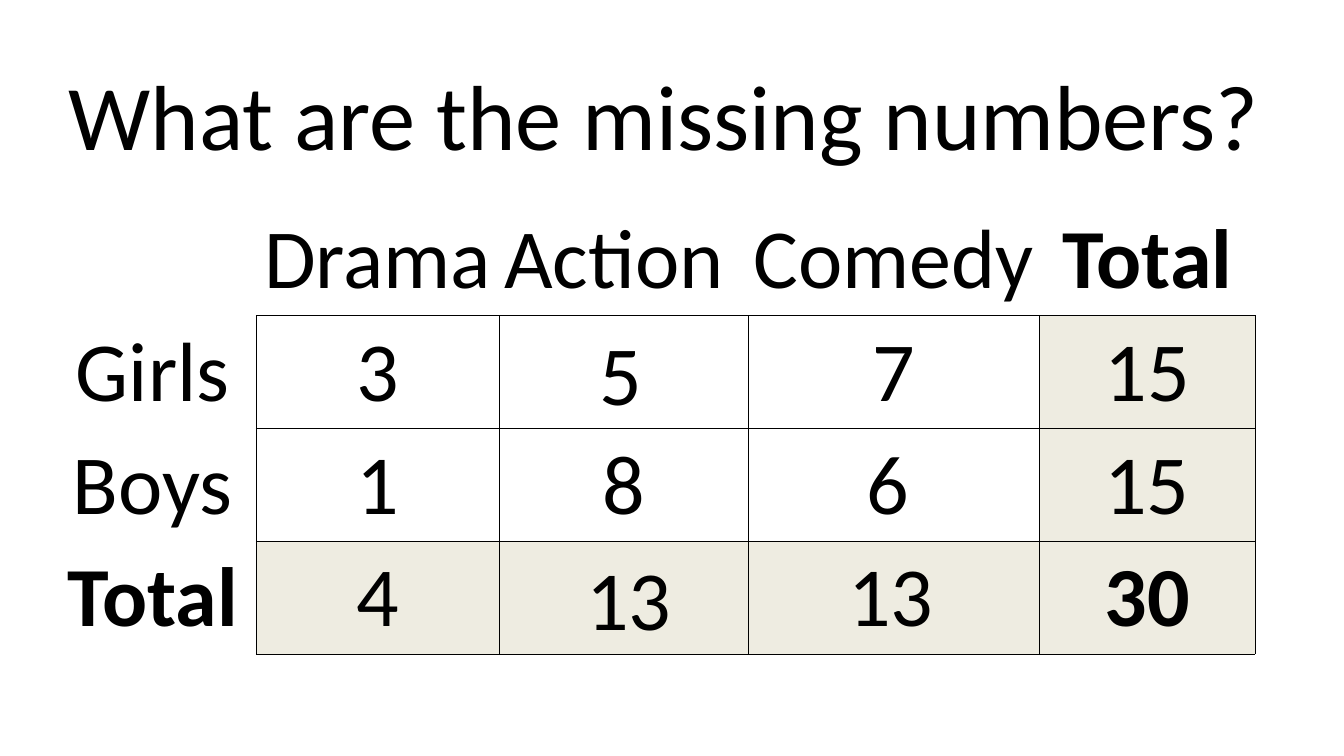
from lxml import etree
from pptx import Presentation
from pptx.dml.color import RGBColor
from pptx.enum.text import MSO_ANCHOR, MSO_AUTO_SIZE, PP_ALIGN
from pptx.oxml.ns import qn
from pptx.util import Inches, Pt

CENTER = PP_ALIGN.CENTER
MIDDLE = MSO_ANCHOR.MIDDLE
GROW = MSO_AUTO_SIZE.SHAPE_TO_FIT_TEXT

COLUMN_WIDTHS = [2.05, 2.41, 2.47, 2.89, 2.14]
ROW_HEIGHT = 1.12
SURVEY = [
    ["", "Drama", "Action ", "Comedy", "Total"],
    ["Girls", "3", "", "7", "15"],
    ["Boys", "1", "8", "", ""],
    ["Total", "", "", "", "30"],
]
BOLD_WORDS = {"Total", "30"}
ANSWERS = [
    ("5", 5.84, 3.14),
    ("4", 3.43, 5.33),
    ("13", 5.71, 5.37),
    ("13", 8.31, 5.33),
    ("6", 8.49, 4.22),
    ("15", 10.85, 4.22),
]


def color(value):
    return RGBColor.from_string(value)


class SlideBuilder:
    font = "Calibri"
    ink = "000000"
    paper = "FFFFFF"
    total_fill = "EEECE1"
    title_size = 66
    number_size = 60
    border_width = 0.5

    def __init__(self, slide):
        self.slide = slide

    def add_words(self, frame, words, size, bold=False):
        paragraph = frame.paragraphs[0]
        paragraph.alignment = CENTER
        run = paragraph.add_run()
        run.text = words
        run.font.name = self.font
        run.font.size = Pt(size)
        run.font.bold = bold
        run.font.color.rgb = color(self.ink)

    def text(self, words, left, top, width, height, size, wrap):
        box = self.slide.shapes.add_textbox(
            Inches(left), Inches(top), Inches(width), Inches(height))
        frame = box.text_frame
        frame.word_wrap = wrap
        frame.auto_size = GROW
        self.add_words(frame, words, size)

    def borders(self, cell, drawn):
        properties = cell._tc.get_or_add_tcPr()
        for side in "LRTB":
            line = etree.SubElement(properties, qn(f"a:ln{side}"))
            if side in drawn:
                line.set("w", str(Pt(self.border_width)))
                fill = etree.SubElement(line, qn("a:solidFill"))
                etree.SubElement(fill, qn("a:srgbClr")).set("val", self.ink)
            else:
                etree.SubElement(line, qn("a:noFill"))

    def cell(self, cell, words, row, column, last_row, last_column):
        inside = row > 0 and column > 0
        if inside:
            drawn = "LRTB"
        elif column > 0:
            drawn = "B"
        else:
            drawn = "R" if row > 0 else ""
        self.borders(cell, drawn)
        is_total = inside and (row == last_row or column == last_column)
        cell.fill.solid()
        cell.fill.fore_color.rgb = color(self.total_fill if is_total else self.paper)
        cell.vertical_anchor = MIDDLE
        cell.margin_left = cell.margin_right = cell.margin_top = Inches(0.01)
        cell.margin_bottom = 0
        if words:
            self.add_words(cell.text_frame, words, self.number_size, words in BOLD_WORDS)

    def table(self, rows, left, top, widths, row_height):
        table = self.slide.shapes.add_table(
            len(rows), len(widths), Inches(left), Inches(top),
            Inches(sum(widths)), Inches(row_height * len(rows))).table
        table.first_row = False
        table.horz_banding = False
        for column, width in zip(table.columns, widths):
            column.width = Inches(width)
        for r, row in enumerate(rows):
            table.rows[r].height = Inches(row_height)
            for c, words in enumerate(row):
                self.cell(table.cell(r, c), words, r, c, len(rows) - 1, len(widths) - 1)


def main():
    deck = Presentation()
    deck.slide_width = Inches(13.33)
    deck.slide_height = Inches(7.5)
    builder = SlideBuilder(deck.slides.add_slide(deck.slide_layouts[6]))
    builder.text("What are the missing numbers? ", 0.56, 0.53, 12.26, 1.21,
                 builder.title_size, True)
    builder.table(SURVEY, 0.49, 2.01, COLUMN_WIDTHS, ROW_HEIGHT)
    for number, left, top in ANSWERS:
        width = 0.21 + 0.42 * len(number)
        builder.text(number, left, top, width, 1.11, builder.number_size, False)
    deck.save("out.pptx")


if __name__ == "__main__":
    main()
